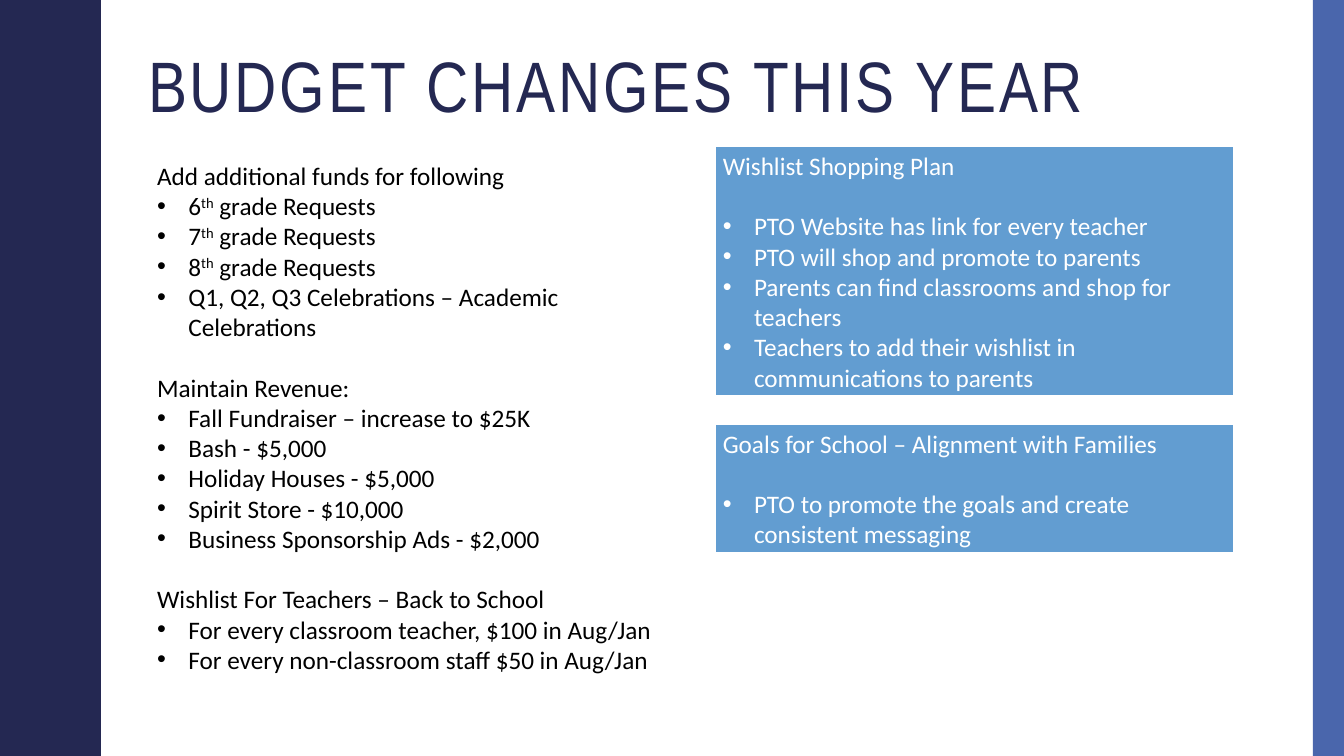
from dataclasses import dataclass

from lxml import etree
from pptx import Presentation
from pptx.dml.color import RGBColor
from pptx.enum.shapes import MSO_SHAPE
from pptx.enum.text import MSO_ANCHOR, MSO_AUTO_SIZE, PP_ALIGN
from pptx.oxml.ns import qn
from pptx.util import Inches, Pt

RECTANGLE = MSO_SHAPE.RECTANGLE
TOP, MIDDLE = MSO_ANCHOR.TOP, MSO_ANCHOR.MIDDLE
NO_FIT = MSO_AUTO_SIZE.NONE
LEFT = PP_ALIGN.LEFT
TITLE_ONLY = 5


@dataclass(frozen=True)
class Theme:
    navy: RGBColor = RGBColor.from_string("242852")
    blue: RGBColor = RGBColor.from_string("4A66AC")
    sky: RGBColor = RGBColor.from_string("629DD1")
    white: RGBColor = RGBColor.from_string("FFFFFF")
    black: RGBColor = RGBColor.from_string("000000")
    title_font: str = "Arial Narrow"
    body_font: str = "Calibri"
    title_size: Pt = Pt(51)
    body_size: Pt = Pt(18)
    section_gap: Pt = Pt(21.6)
    card_border: Pt = Pt(4)


THEME = Theme()
WIDTH, HEIGHT = 13.33, 7.5
WAVE_PERIOD = 1.5
WAVE_RISE = [
    (0.78, 0), (0.78, 0.07), (0.79, 0.14), (0.8, 0.2), (0.81, 0.25),
    (0.83, 0.29), (0.85, 0.33), (0.87, 0.38), (0.89, 0.42), (0.91, 0.46),
    (0.93, 0.5), (0.95, 0.55), (0.96, 0.61), (0.97, 0.68), (0.97, 0.75),
]

BUDGET_SECTIONS = [
    ("Add additional funds for following", [
        ("6", "th", " grade Requests"),
        ("7", "th", " grade Requests"),
        ("8", "th", " grade Requests"),
        "Q1, Q2, Q3 Celebrations – Academic Celebrations",
    ]),
    ("Maintain Revenue:", [
        "Fall Fundraiser – increase to $25K",
        "Bash - $5,000",
        "Holiday Houses - $5,000",
        "Spirit Store - $10,000",
        "Business Sponsorship Ads - $2,000",
    ]),
    ("Wishlist For Teachers – Back to School", [
        "For every classroom teacher, $100 in Aug/Jan",
        "For every non-classroom staff $50 in Aug/Jan",
    ]),
]
CARDS = [
    (1.43, 2.52, "Wishlist Shopping Plan", [
        "PTO Website has link for every teacher",
        "PTO will shop and promote to parents",
        "Parents can find classrooms and shop for teachers",
        "Teachers to add their wishlist in communications to parents",
    ]),
    (4.19, 1.31, "Goals for School – Alignment with Families", [
        "PTO to promote the goals and create consistent messaging",
    ]),
]


def paint(shape, color):
    shape.shadow.inherit = False
    shape.fill.solid()
    shape.fill.fore_color.rgb = color
    shape.line.fill.background()


def add_rectangle(page, left, top, width, height, color):
    shape = page.shapes.add_shape(
        RECTANGLE, Inches(left), Inches(top), Inches(width), Inches(height))
    paint(shape, color)
    return shape


def add_wave(page):
    fall = [(x, WAVE_PERIOD - y) for x, y in reversed(WAVE_RISE[1:-1])]
    crest = WAVE_RISE + fall
    edge = [(x, y + cycle * WAVE_PERIOD)
            for cycle in range(round(HEIGHT / WAVE_PERIOD)) for x, y in crest]
    outline = edge + [(WAVE_RISE[0][0], HEIGHT), (0, HEIGHT)]
    builder = page.shapes.build_freeform(0, 0, scale=Inches(1))
    builder.add_line_segments(outline, close=True)
    paint(builder.convert_to_shape(), THEME.navy)


def add_title(page, text):
    title = page.shapes.title
    title.left, title.top = Inches(1.37), Inches(0.42)
    title.width, title.height = Inches(11.13), Inches(0.93)
    frame = title.text_frame
    frame.text = text
    frame.auto_size = NO_FIT
    frame.vertical_anchor = MIDDLE
    para = frame.paragraphs[0]
    para.alignment = LEFT
    para.line_spacing = 0.9
    span = para.runs[0]
    span.font.name = THEME.title_font
    span.font.size = THEME.title_size
    span.font.color.rgb = THEME.navy
    span.font._element.set("spc", "200")


def add_bullet(para):
    properties = para._p.get_or_add_pPr()
    properties.set("marL", str(Inches(0.31)))
    properties.set("indent", str(-Inches(0.31)))
    etree.SubElement(properties, qn("a:buFont")).set("typeface", "Arial")
    etree.SubElement(properties, qn("a:buChar")).set("char", "•")


def write_para(para, content, color, bullet=False, gap=False):
    if bullet:
        add_bullet(para)
    para.alignment = LEFT
    if gap:
        para.space_before = THEME.section_gap
    if isinstance(content, str):
        para.text = content
    else:
        for part in content:
            para.add_run().text = part
        para.runs[1].font._element.set("baseline", "30000")
    for span in para.runs:
        span.font.name = THEME.body_font
        span.font.size = THEME.body_size
        span.font.color.rgb = color


def write_sections(frame, sections, color, gap_below_heading=False):
    frame.word_wrap = True
    for number, (heading, items) in enumerate(sections):
        para = frame.add_paragraph() if number else frame.paragraphs[0]
        write_para(para, heading, color, gap=number > 0)
        for index, item in enumerate(items):
            write_para(frame.add_paragraph(), item, color, bullet=True,
                       gap=gap_below_heading and index == 0)


def add_budget_list(page):
    box = page.shapes.add_textbox(
        Inches(1.46), Inches(1.24), Inches(5.11), Inches(6.16))
    frame = box.text_frame
    frame.vertical_anchor = TOP
    frame.margin_top = Inches(0.35)
    write_sections(frame, BUDGET_SECTIONS, THEME.black)


def add_card(page, top, height, heading, items):
    card = add_rectangle(page, 7.07, top, 5.19, height, THEME.sky)
    card.line.color.rgb = THEME.white
    card.line.width = THEME.card_border
    card.text_frame.vertical_anchor = MIDDLE
    write_sections(card.text_frame, [(heading, items)], THEME.white,
                   gap_below_heading=True)


def main():
    deck = Presentation()
    deck.slide_width, deck.slide_height = Inches(WIDTH), Inches(HEIGHT)
    page = deck.slides.add_slide(deck.slide_layouts[TITLE_ONLY])
    page.background.fill.solid()
    page.background.fill.fore_color.rgb = THEME.white
    add_wave(page)
    add_rectangle(page, 13.02, 0, 0.31, HEIGHT, THEME.blue)
    add_title(page, "BUDGET CHANGES THIS YEAR")
    add_budget_list(page)
    for card in CARDS:
        add_card(page, *card)
    deck.save("out.pptx")


if __name__ == "__main__":
    main()
